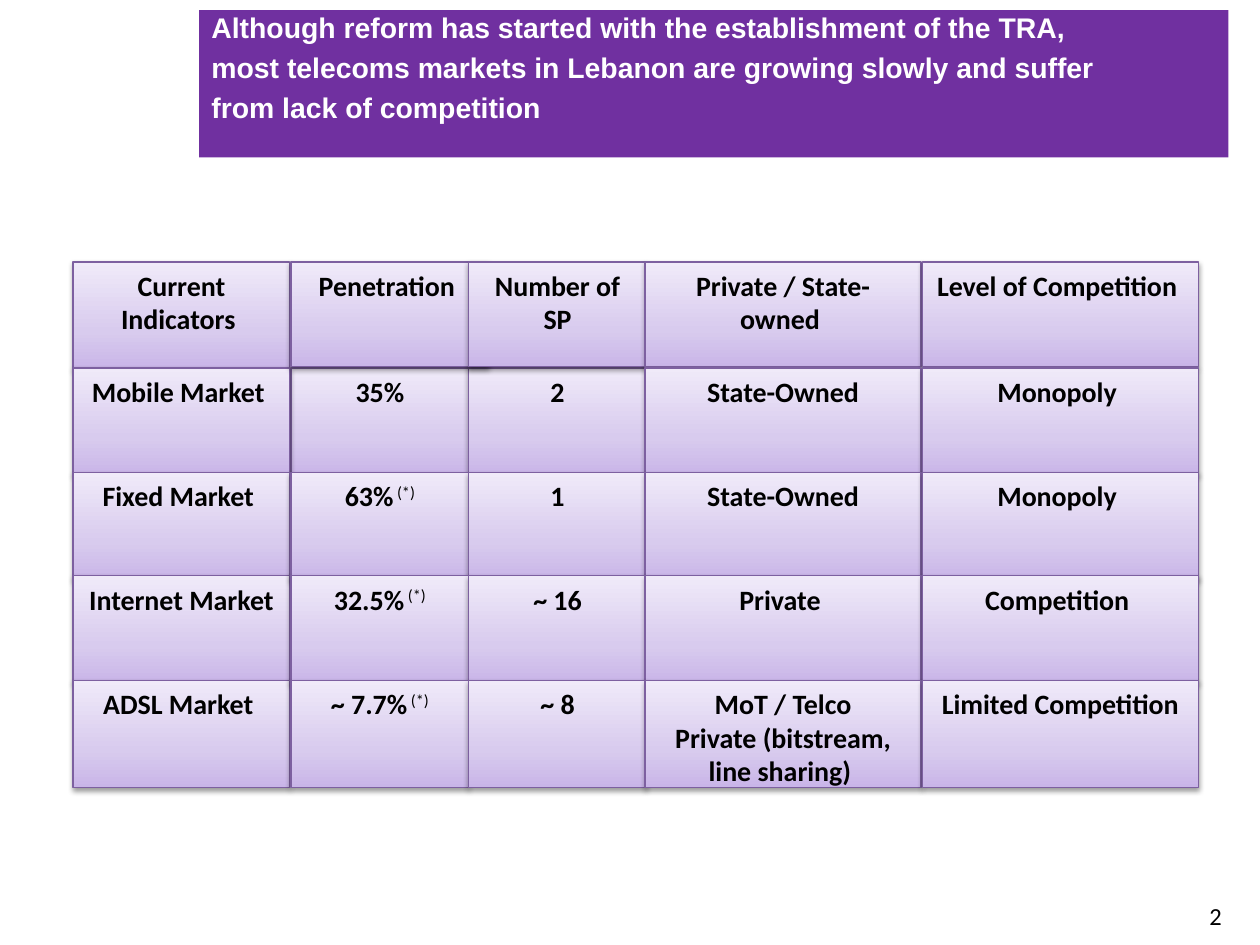
import itertools

import pptx
import pptx.dml.color
import pptx.enum.shapes
import pptx.enum.text
import pptx.oxml
import pptx.oxml.ns
import pptx.util
from pptx.util import Inches

COLORS = {
    "banner": "7030A0", "banner_text": "FFFFFF", "text": "000000", "border": "7D60A0",
    "cell_bottom": "C9B5E8", "cell_middle": "D8CBEE", "cell_top": "F0EAF9",
}
TITLE = [
    "Although reform has started with the establishment of the TRA,",
    "most telecoms markets in Lebanon are growing slowly and suffer",
    "from lack of competition",
]
NOTE = " (*)"
INDICATORS = [
    ["Current Indicators ", "Penetration ", "Number of SP", "Private / State-owned ", "Level of Competition "],
    ["Mobile Market ", "35%", "2", "State-Owned", "Monopoly "],
    ["Fixed Market ", "63% (*)", "1", "State-Owned", "Monopoly "],
    ["Internet Market", "32.5% (*)", "~ 16", "Private ", "Competition "],
    ["ADSL Market ", "~ 7.7% (*)", "~ 8", "MoT / Telco\nPrivate (bitstream, line sharing) ", "Limited Competition"],
]
COLUMN_LEFTS = [0.58, 2.31, 3.72, 5.12, 7.32]
COLUMN_WIDTHS = [1.72, 1.41, 1.41, 2.19, 2.19]
ROW_TOPS = [2.08, 2.92, 3.75, 4.57, 5.4]
ROW_HEIGHT = 0.85
HEADER_HEIGHT = 0.83
PENETRATION_HEADER = (0, 1)
PENETRATION_HEADER_WIDTH = 1.57
BACKMOST = [(0, 0), (1, 1), (1, 0), (2, 0), (3, 0), (4, 0), (1, 2)]
ALIGN = pptx.enum.text.PP_ALIGN
NAMESPACE = pptx.oxml.ns.nsdecls("a")


def rgb(name):
    return pptx.dml.color.RGBColor.from_string(COLORS[name])


def write(frame, lines, size=16, font="Calibri", color="text", bold=True,
          align=ALIGN.LEFT, gap=0, wrap=True):
    frame.word_wrap = wrap
    frame.vertical_anchor = pptx.enum.text.MSO_ANCHOR.TOP
    for index, line in enumerate(lines):
        paragraph = frame.paragraphs[0] if index == 0 else frame.add_paragraph()
        paragraph.alignment = align
        paragraph.space_before = pptx.util.Pt(gap if index else 0)
        value, mark, _ = line.partition(NOTE)
        for text in filter(None, (value, mark)):
            run = paragraph.add_run()
            run.text = text
            run.font.size = pptx.util.Pt(size)
            run.font.name = font
            run.font.bold = bold and text != NOTE
            run.font.color.rgb = rgb(color)
            if text == NOTE:
                run.font._element.set("baseline", "30000")


def add_box(shapes, left, top, width, height):
    box = shapes.add_shape(pptx.enum.shapes.MSO_SHAPE.RECTANGLE,
                           Inches(left), Inches(top), Inches(width), Inches(height))
    box.shadow.inherit = False
    return box


def decorate(box):
    box.line.color.rgb = rgb("border")
    box.line.width = pptx.util.Pt(0.75)
    properties = box._element.spPr
    stops = "".join(
        f'<a:gs pos="{position * 1000}"><a:srgbClr val="{COLORS[name]}"/></a:gs>'
        for position, name in ((0, "cell_bottom"), (35, "cell_middle"), (100, "cell_top")))
    properties.find(pptx.oxml.ns.qn("a:prstGeom")).addnext(pptx.oxml.parse_xml(
        f'<a:gradFill {NAMESPACE} rotWithShape="1"><a:gsLst>{stops}</a:gsLst>'
        '<a:lin ang="16200000" scaled="0"/></a:gradFill>'))
    properties.find(pptx.oxml.ns.qn("a:effectLst")).append(pptx.oxml.parse_xml(
        f'<a:outerShdw {NAMESPACE} blurRad="39370" dist="20320" dir="5400000" '
        f'rotWithShape="0"><a:srgbClr val="{COLORS["text"]}"><a:alpha val="38000"/>'
        '</a:srgbClr></a:outerShdw>'))


def add_title(slide):
    banner = add_box(slide.shapes, 1.58, 0.08, 8.17, 1.17)
    banner.fill.solid()
    banner.fill.fore_color.rgb = rgb("banner")
    banner.line.fill.background()
    banner.text_frame.margin_top = 0
    write(banner.text_frame, TITLE, size=16.2, font="Arial", color="banner_text", gap=3.5)


def add_indicators(slide):
    grid = slide.shapes.add_group_shape()
    places = itertools.product(range(len(ROW_TOPS)), range(len(COLUMN_LEFTS)))
    for place in BACKMOST + [place for place in places if place not in BACKMOST]:
        row, column = place
        width = PENETRATION_HEADER_WIDTH if place == PENETRATION_HEADER else COLUMN_WIDTHS[column]
        height = HEADER_HEIGHT if row == 0 and column > 0 else ROW_HEIGHT
        cell = add_box(grid.shapes, COLUMN_LEFTS[column], ROW_TOPS[row], width, height)
        decorate(cell)
        write(cell.text_frame, INDICATORS[row][column].split("\n"), align=ALIGN.CENTER)


def add_page_number(slide):
    number = slide.shapes.add_textbox(Inches(9.5), Inches(7.1), Inches(0.43), Inches(0.34))
    write(number.text_frame, ["2"], size=14, bold=False, wrap=False)


def main():
    deck = pptx.Presentation()
    deck.slide_width, deck.slide_height = Inches(10), Inches(7.5)
    slide = deck.slides.add_slide(deck.slide_layouts[6])
    add_page_number(slide)
    add_title(slide)
    add_indicators(slide)
    deck.save("out.pptx")


if __name__ == "__main__":
    main()
